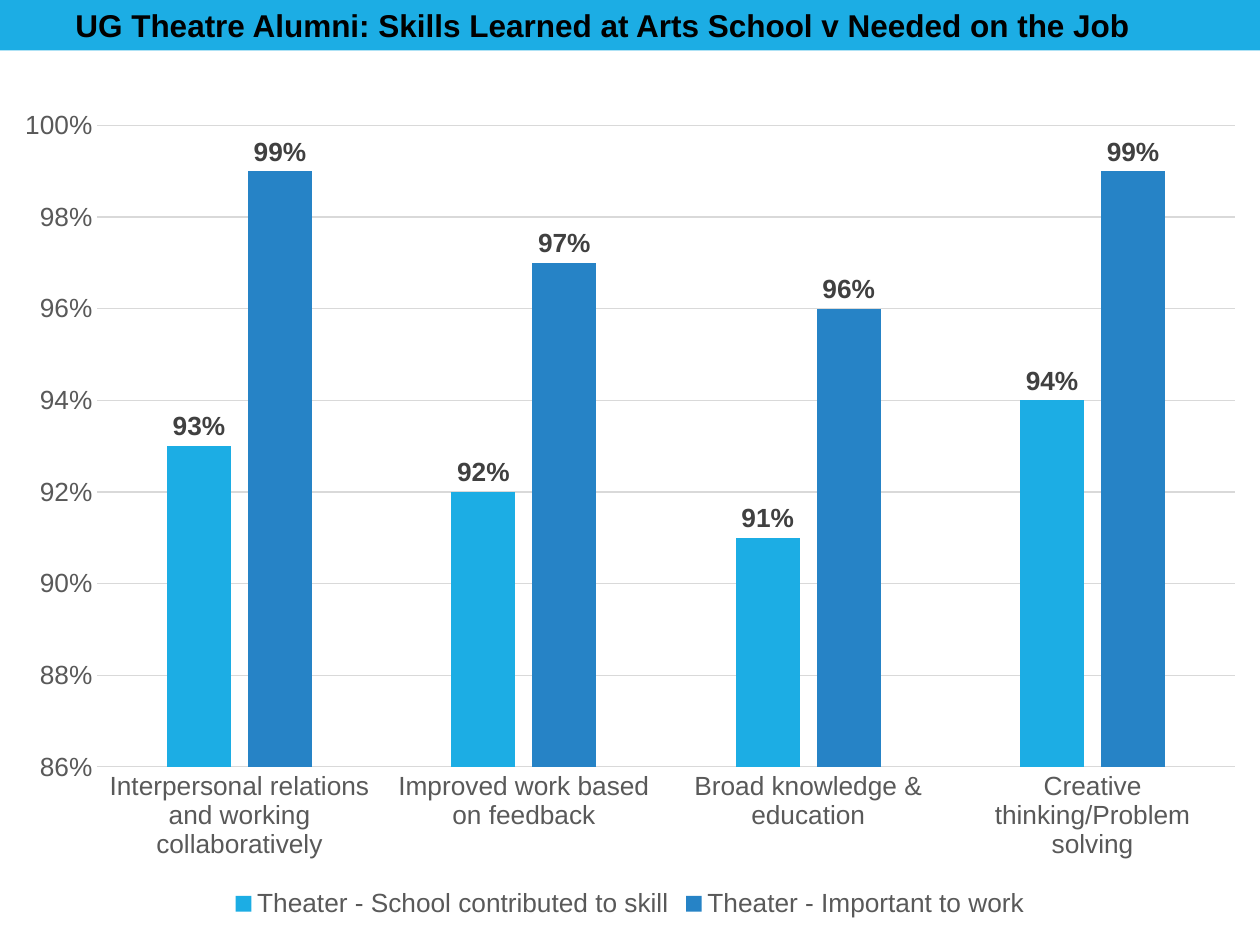
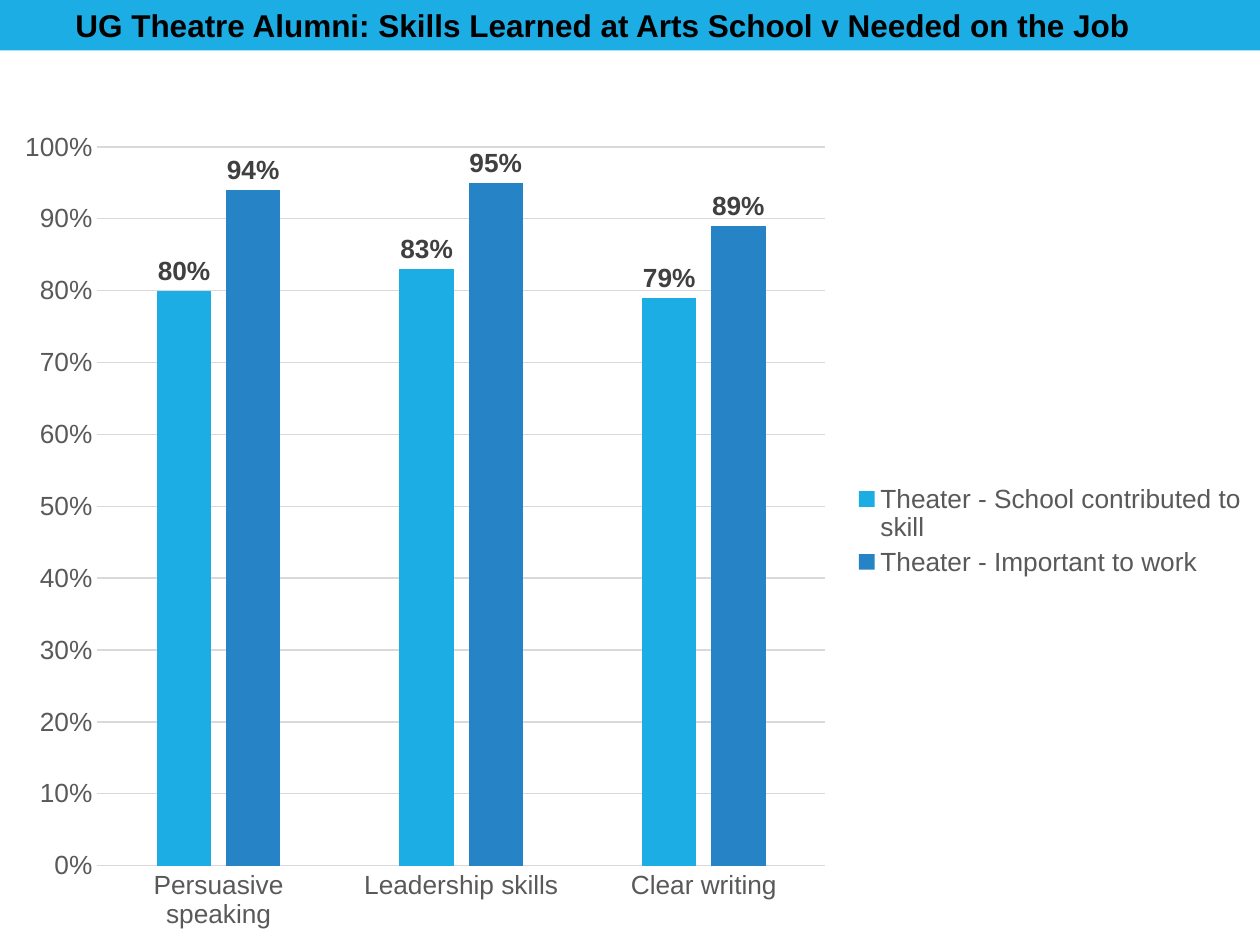
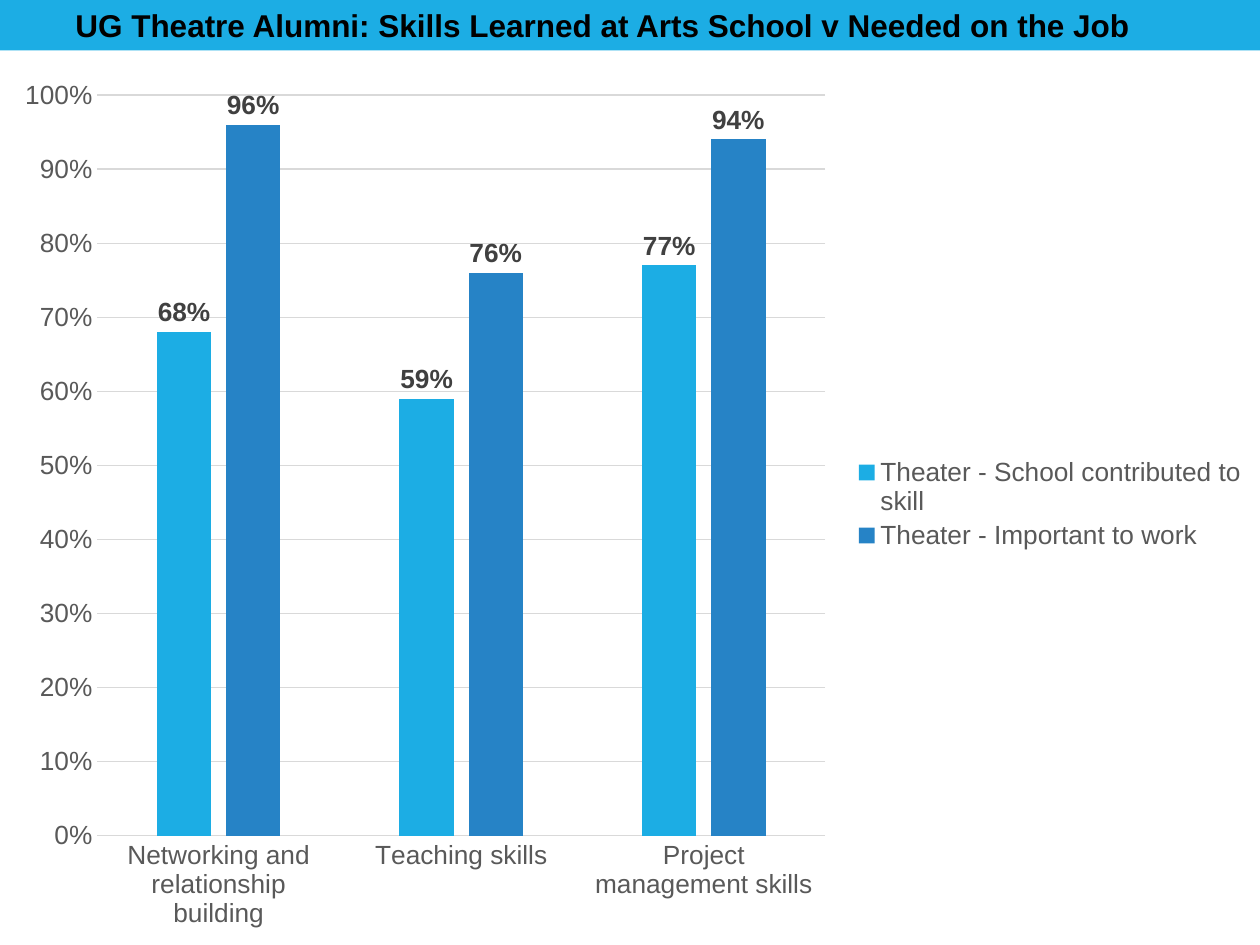
from pptx import Presentation
from pptx import util as u
from pptx.chart import data as chart_data
from pptx.dml import color
from pptx.enum import chart as ch
from pptx.enum import shapes, text

FONT = "Arial"
SKY, BLUE = "1CADE4", "2683C6"
BLACK, DARK, GREY, RULE = "000000", "404040", "595959", "D9D9D9"
WIDTH, HEIGHT, BAND_HEIGHT = 10, 7.5, 0.4
TITLE = "UG Theatre Alumni: Skills Learned at Arts School v Needed on the Job"
SERIES = [("Theater - School contributed to skill", SKY),
          ("Theater - Important to work", BLUE)]

BOTTOM, RIGHT = ch.XL_LEGEND_POSITION.BOTTOM, ch.XL_LEGEND_POSITION.RIGHT
TEN_STEPS = {"minimum_scale": 0, "maximum_scale": 1, "major_unit": 0.1}
SLIDES = [
    {"box": (0, 0.75, WIDTH, 6.58), "legend": BOTTOM,
     "scale": {"minimum_scale": 0.86, "maximum_scale": 1, "major_unit": 0.02},
     "skills": {
         "Interpersonal relations and working collaboratively": (0.93, 0.99),
         "Improved work based on feedback": (0.92, 0.97),
         "Broad knowledge & education": (0.91, 0.96),
         "Creative thinking/Problem solving": (0.94, 0.99)}},
    {"box": (0, 0.92, WIDTH, 6.58), "legend": RIGHT, "scale": TEN_STEPS,
     "skills": {
         "Persuasive speaking": (0.80, 0.94),
         "Leadership skills": (0.83, 0.95),
         "Clear writing": (0.79, 0.89)}},
    {"box": (0, 0.5, WIDTH, 7), "legend": RIGHT, "scale": TEN_STEPS,
     "skills": {
         "Networking and relationship building": (0.68, 0.96),
         "Teaching skills": (0.59, 0.76),
         "Project management skills": (0.77, 0.94)}},
]


def rgb(code):
    return color.RGBColor.from_string(code)


def inches(box):
    return [u.Inches(length) for length in box]


def set_all(target, values):
    for name, value in values.items():
        setattr(target, name, value)


def style_font(font, size, code, bold=False):
    set_all(font, {"name": FONT, "size": u.Pt(size), "bold": bold})
    font.color.rgb = rgb(code)


def style_rule(line):
    line.width = u.Pt(0.75)
    line.color.rgb = rgb(RULE)


def add_header(page, box):
    """Draw the coloured band with the title on it."""
    left, top, width, height = box
    band = page.shapes.add_shape(shapes.MSO_SHAPE.RECTANGLE, *inches(box))
    band.shadow.inherit = False
    band.fill.solid()
    band.fill.fore_color.rgb = rgb(SKY)
    band.line.fill.background()

    title_box = (left + 0.5, top, width - 0.75, height)
    frame = page.shapes.add_textbox(*inches(title_box)).text_frame
    set_all(frame, {"word_wrap": True,
                    "auto_size": text.MSO_AUTO_SIZE.SHAPE_TO_FIT_TEXT})
    span = frame.paragraphs[0].add_run()
    span.text = TITLE
    style_font(span.font, 18, BLACK, bold=True)


def style_axes(chart, scale):
    for axis in (chart.category_axis, chart.value_axis):
        set_all(axis, {"major_tick_mark": ch.XL_TICK_MARK.NONE,
                       "minor_tick_mark": ch.XL_TICK_MARK.NONE})
        style_font(axis.tick_labels.font, 15, GREY)
    style_rule(chart.category_axis.format.line)
    values = chart.value_axis
    set_all(values, scale)
    set_all(values.tick_labels, {"number_format": "0%",
                                 "number_format_is_linked": False})
    values.format.line.fill.background()
    values.has_major_gridlines = True
    style_rule(values.major_gridlines.format.line)


def style_columns(plot):
    set_all(plot, {"gap_width": 219, "overlap": -27, "vary_by_categories": False})
    for series, (_, code) in zip(plot.series, SERIES):
        series.invert_if_negative = False
        series.format.fill.solid()
        series.format.fill.fore_color.rgb = rgb(code)
        labels = series.data_labels
        set_all(labels, {"show_value": True, "number_format": "0%",
                         "number_format_is_linked": False,
                         "position": ch.XL_LABEL_POSITION.OUTSIDE_END})
        style_font(labels.font, 15, DARK, bold=True)


def add_skills_chart(page, box, skills, scale, legend):
    data = chart_data.CategoryChartData(number_format="0%")
    data.categories = list(skills)
    for (name, _), shares in zip(SERIES, zip(*skills.values())):
        data.add_series(name, shares)
    chart = page.shapes.add_chart(
        ch.XL_CHART_TYPE.COLUMN_CLUSTERED, *inches(box), data).chart
    set_all(chart, {"has_title": False, "has_legend": True})
    style_font(chart.font, 15, BLACK)
    set_all(chart.legend, {"position": legend, "include_in_layout": False})
    style_font(chart.legend.font, 15, GREY)
    style_axes(chart, scale)
    style_columns(chart.plots[0])


def main():
    deck = Presentation()
    set_all(deck, {"slide_width": u.Inches(WIDTH),
                   "slide_height": u.Inches(HEIGHT)})
    for content in SLIDES:
        page = deck.slides.add_slide(deck.slide_layouts[6])
        add_header(page, (0, 0, WIDTH, BAND_HEIGHT))
        add_skills_chart(page, **content)
    deck.save("out.pptx")


if __name__ == "__main__":
    main()
